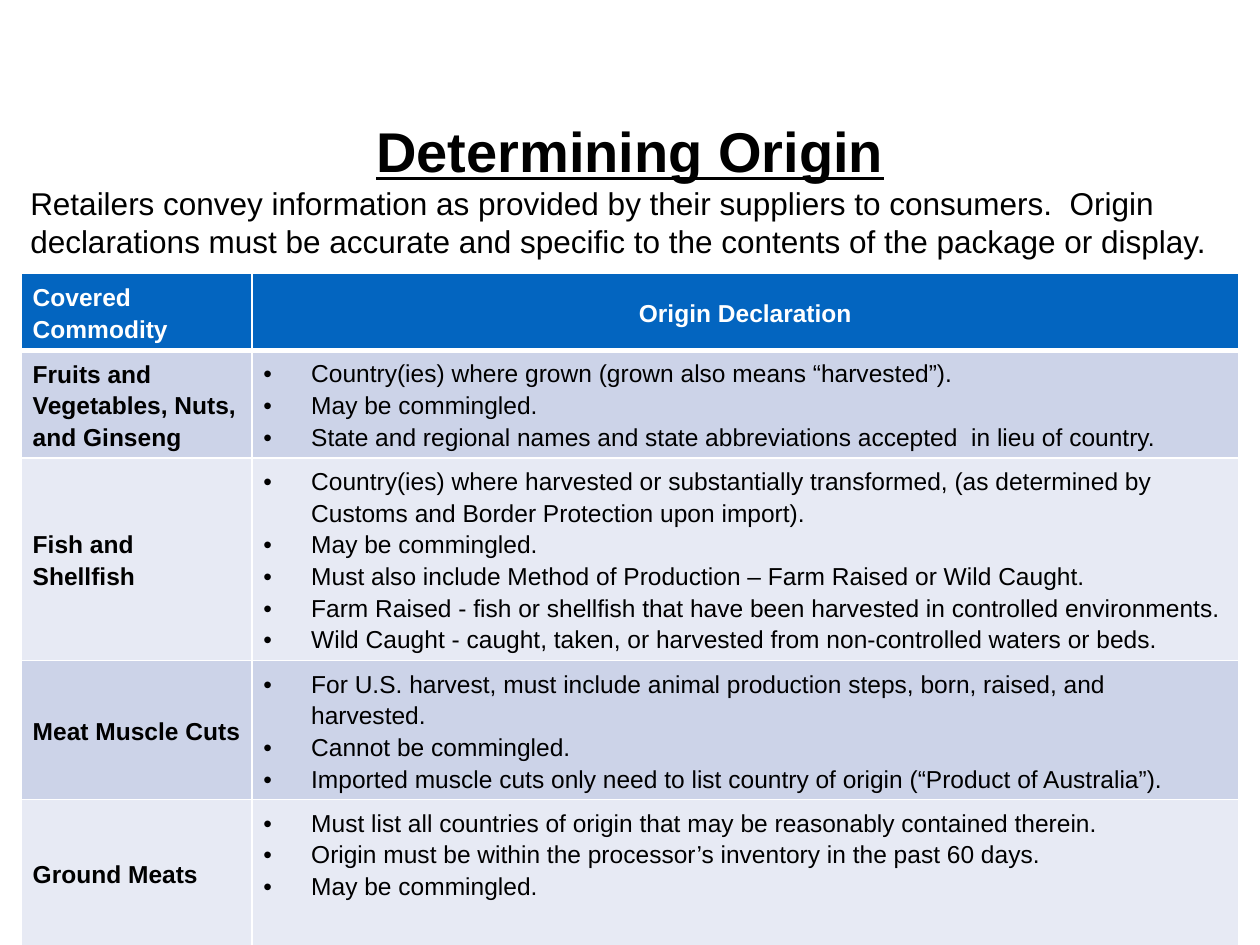
import pptx
import pptx.dml.color
import pptx.enum.text
import pptx.oxml.ns
import pptx.util
from lxml import etree

Inches = pptx.util.Inches
ALIGN = pptx.enum.text.PP_ALIGN
ANCHOR = pptx.enum.text.MSO_ANCHOR

# Content
TITLE = "Determining Origin"
INTRODUCTION = (
    "Retailers convey information as provided by their suppliers to consumers.  "
    "Origin declarations must be accurate and specific to the contents of the "
    "package or display."
)
HEADERS = ("Covered Commodity", "Origin Declaration")
COMMODITIES = [
    ("Fruits and Vegetables, Nuts, and Ginseng", [
        "Country(ies) where grown (grown also means “harvested”).",
        "May be commingled.",
        "State and regional names and state abbreviations accepted  in lieu of country.",
    ]),
    ("Fish and Shellfish", [
        "Country(ies) where harvested or substantially transformed, (as determined "
        "by Customs and Border Protection upon import).",
        "May be commingled.",
        "Must also include Method of Production – Farm Raised or Wild Caught.",
        "Farm Raised - fish or shellfish that have been harvested in controlled environments.",
        "Wild Caught - caught, taken, or harvested from non-controlled waters or beds.",
    ]),
    ("Meat Muscle Cuts", [
        "For U.S. harvest, must include animal production steps, born, raised, and harvested.",
        "Cannot be commingled.",
        "Imported muscle cuts only need to list country of origin (“Product of Australia”).",
    ]),
    ("Ground Meats", [
        "Must list all countries of origin that may be reasonably contained therein.",
        "Origin must be within the processor’s inventory in the past 60 days.",
        "May be commingled.",
    ]),
]

# Style and layout
COLORS = {"text": "000000", "white": "FFFFFF", "header": "0365C0",
          "odd": "CCD3E8", "even": "E7EAF4"}
FONT = "Arial"
COLUMN_WIDTHS = (1.83, 7.83)
ROW_HEIGHTS = (0.61, 0.8, 1.59, 1.1, 1.17)
BULLET_INDENT = 0.38
TAB_STOP = 0.5


def rgb(name):
    return pptx.dml.color.RGBColor.from_string(COLORS[name])


def add_element(parent, tag, **attributes):
    element = etree.SubElement(parent, pptx.oxml.ns.qn(tag))
    for name, value in attributes.items():
        element.set(name, str(value))
    return element


def write_text(frame, lines, size=14, color="text", bold=False, underline=False,
               align=ALIGN.LEFT, line_spacing=None, bullet=False):
    """Fill a text frame with one formatted paragraph per line."""
    for index, line in enumerate(lines):
        paragraph = frame.paragraphs[0] if index == 0 else frame.add_paragraph()
        properties = paragraph._p.get_or_add_pPr()
        indent = Inches(BULLET_INDENT) if bullet else 0
        properties.set("marL", str(indent))
        properties.set("indent", str(-indent))
        if bullet:
            add_element(properties, "a:buFont", typeface=FONT)
            add_element(properties, "a:buChar", char="•")
            tabs = add_element(properties, "a:tabLst")
            add_element(tabs, "a:tab", pos=Inches(TAB_STOP), algn="l")
        else:
            add_element(properties, "a:buNone")
        paragraph.alignment = align
        paragraph.line_spacing = line_spacing
        paragraph.space_before = pptx.util.Pt(0)
        run = paragraph.add_run()
        run.text = line
        run.font.name = FONT
        run.font.size = pptx.util.Pt(size)
        run.font.bold = bold
        run.font.underline = underline
        run.font.color.rgb = rgb(color)


def place(shape, left, top, width, height, anchor):
    shape.left, shape.top = Inches(left), Inches(top)
    shape.width, shape.height = Inches(width), Inches(height)
    frame = shape.text_frame
    frame.word_wrap = True
    frame.auto_size = pptx.enum.text.MSO_AUTO_SIZE.NONE
    frame.vertical_anchor = anchor
    frame.margin_left = frame.margin_right = Inches(0.07)
    frame.margin_top = frame.margin_bottom = Inches(0.04)
    return frame


def style_cell(cell, fill, anchor, bottom_width=1):
    cell.fill.solid()
    cell.fill.fore_color.rgb = rgb(fill)
    cell.vertical_anchor = anchor
    cell.margin_left = cell.margin_right = Inches(0.09)
    cell.margin_top = cell.margin_bottom = Inches(0.05)
    properties = cell._tc.get_or_add_tcPr()
    # Borders come before the fill
    widths = {"a:lnL": 1, "a:lnR": 1, "a:lnT": 1, "a:lnB": bottom_width}
    for position, (tag, width) in enumerate(widths.items()):
        border = add_element(properties, tag, w=pptx.util.Pt(width))
        add_element(add_element(border, "a:solidFill"), "a:srgbClr", val=COLORS["white"])
        properties.insert(position, border)


def add_commodity_table(slide):
    table = slide.shapes.add_table(
        len(ROW_HEIGHTS), len(COLUMN_WIDTHS), Inches(0.17), Inches(2.17),
        Inches(sum(COLUMN_WIDTHS)), Inches(sum(ROW_HEIGHTS))).table
    for column, width in zip(table.columns, COLUMN_WIDTHS):
        column.width = Inches(width)
    for row, height in zip(table.rows, ROW_HEIGHTS):
        row.height = Inches(height)

    # Header row
    for column, (header, align) in enumerate(zip(HEADERS, (ALIGN.LEFT, ALIGN.CENTER))):
        cell = table.cell(0, column)
        style_cell(cell, "header", ANCHOR.MIDDLE, bottom_width=3)
        write_text(cell.text_frame, [header], color="white", bold=True,
                   align=align, line_spacing=1.15)

    # Commodity rows
    for row, (commodity, declarations) in enumerate(COMMODITIES, start=1):
        fill = "odd" if row % 2 else "even"
        name_cell, declaration_cell = table.cell(row, 0), table.cell(row, 1)
        style_cell(name_cell, fill, ANCHOR.MIDDLE)
        write_text(name_cell.text_frame, [commodity], bold=True, line_spacing=1.15)
        style_cell(declaration_cell, fill, ANCHOR.TOP)
        write_text(declaration_cell.text_frame, declarations, bullet=True,
                   line_spacing=1.15)


def main():
    presentation = pptx.Presentation()
    presentation.slide_width, presentation.slide_height = Inches(10), Inches(7.5)
    slide = presentation.slides.add_slide(presentation.slide_layouts[1])

    # Title and introduction
    title = place(slide.shapes.title, 0.5, 0.83, 9, 0.72, ANCHOR.MIDDLE)
    write_text(title, [TITLE], size=32, bold=True, underline=True, align=ALIGN.CENTER)
    body = place(slide.placeholders[1], 0.17, 1.42, 9.67, 5.92, ANCHOR.TOP)
    write_text(body, [INTRODUCTION], size=18)

    add_commodity_table(slide)
    presentation.save("out.pptx")


if __name__ == "__main__":
    main()
